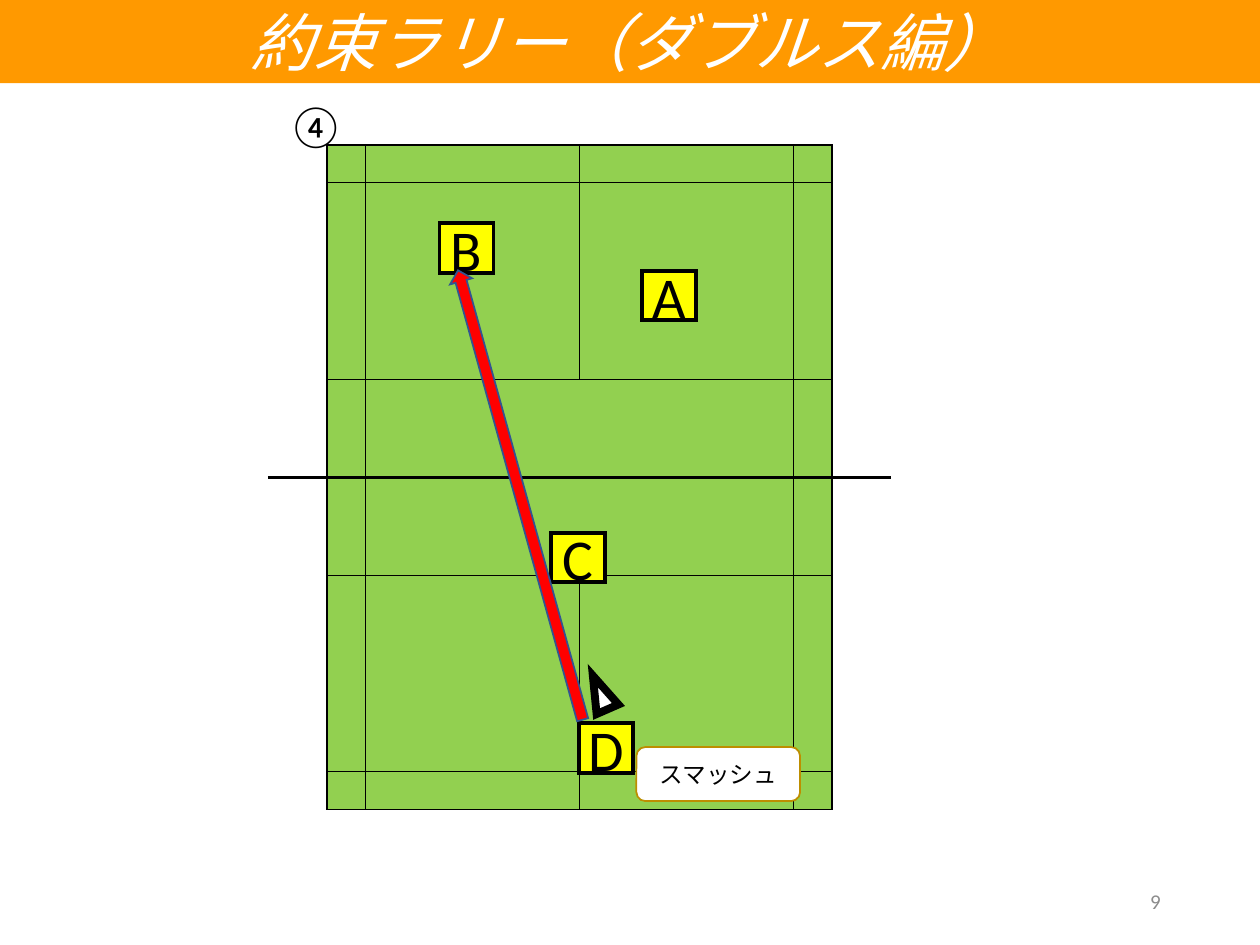
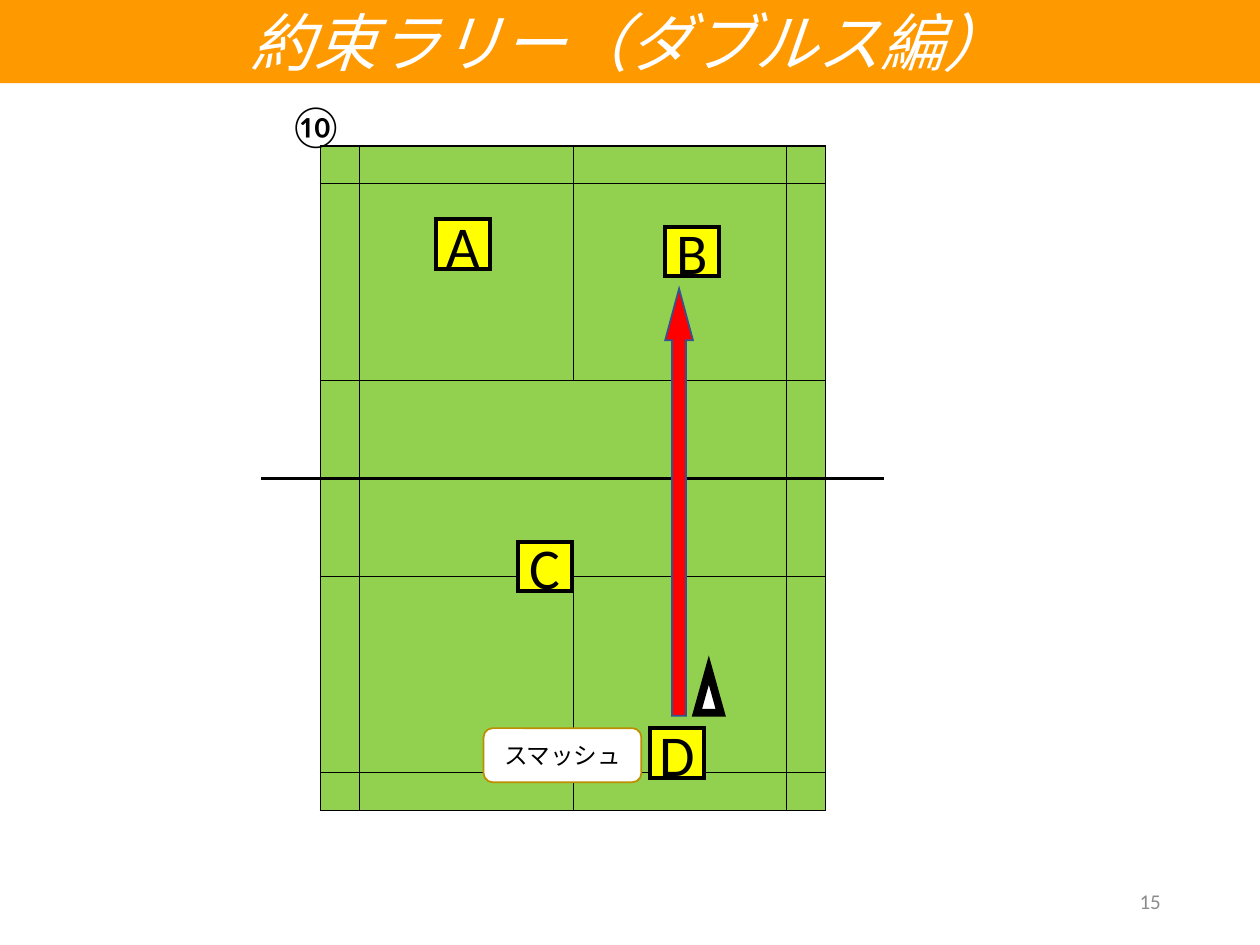
from lxml import etree
from pptx import Presentation
from pptx import util as u
from pptx.dml.color import RGBColor
from pptx.enum import shapes, text
from pptx.oxml.ns import qn

COLOURS = {
    "band": "FF9900", "court": "92D050", "player": "FFFF00", "shot": "FF0000",
    "shot_edge": "325491", "call_edge": "BD8E00", "ink": "000000",
    "paper": "FFFFFF", "number": "8C8C8C",
}
LATIN, JAPANESE = "Calibri", "Noto Sans CJK JP"
COLUMNS = (1.19, 0.78, 4.31, 4.31, 0.78, 1.19)
ROWS = (0.76, 3.97, 1.97, 1.97, 3.97, 0.76)
NO_STYLE = "{2D5ABB26-0587-4C30-8999-92F81FD0307C}"

RALLIES = [
    dict(mark="④", number="9", court=(5.4, 2.92),
         players={"A": (12.95, 5.46), "B": (8.86, 4.5), "D": (11.68, 14.58), "C": (11.1, 10.74)},
         call=(12.83, 15.06, 3.3, 1.09),
         shot=dict(box=(10.26, 5.28, 0.46, 9.4), turn=344.5, head=0.5),
         racket=dict(box=(11.86, 13.59, 0.48, 0.74), turn=336.4)),
    dict(mark="⑩", number="15", court=(5.27, 2.94),
         players={"A": (8.79, 4.42), "B": (13.41, 4.57), "D": (13.11, 14.68), "C": (10.44, 10.92)},
         call=(9.75, 14.68, 3.18, 1.09),
         shot=dict(box=(13.41, 5.82, 0.56, 8.61), turn=0, head=1.857),
         racket=dict(box=(14.05, 13.51, 0.48, 0.86), turn=0)),
]


def colour(name):
    return RGBColor.from_string(COLOURS[name])


def write(frame, words, size, ink="ink", font=LATIN, italic=None,
          align=text.PP_ALIGN.CENTER, anchor=text.MSO_ANCHOR.MIDDLE, insets=None, wrap=True):
    frame.word_wrap = wrap
    frame.vertical_anchor = anchor
    if insets:
        across, down = map(u.Cm, insets)
        frame.margin_left = frame.margin_right = across
        frame.margin_top = frame.margin_bottom = down
    line = frame.paragraphs[0]
    line.alignment = align
    run = line.add_run()
    run.text = words
    run.font.size, run.font.name, run.font.italic = u.Pt(size), font, italic
    run.font.color.rgb = colour(ink)
    etree.SubElement(run.font._element, qn("a:ea"), typeface=JAPANESE)


def rule(properties, side, width):
    edge = etree.SubElement(properties, qn(f"a:{side}"), w=str(u.Pt(width)))
    if width:
        paint = etree.SubElement(edge, qn("a:solidFill"))
        etree.SubElement(paint, qn("a:srgbClr"), val=COLOURS["ink"])
    else:
        etree.SubElement(edge, qn("a:noFill"))


def upright(index):
    return {0: 0, 1: 1, 5: 1, 6: 0}.get(index, 0.5)


def level(index, outside):
    if outside:
        return 2 if index == 3 else 0
    return {0: 1, 3: 2, 6: 1}.get(index, 0.5)


class RallySlide:
    """Holds the shared style and draws each part of a rally on its slide."""

    def __init__(self, deck):
        self.slide = deck.slides.add_slide(deck.slide_layouts[6])

    def shape(self, kind, box, fill, edge=None, width=1, turn=0):
        part = self.slide.shapes.add_shape(kind, *map(u.Cm, box))
        part.shadow.inherit = False
        part.fill.solid()
        part.fill.fore_color.rgb = colour(fill)
        if edge:
            part.line.color.rgb = colour(edge)
            part.line.width = u.Pt(width)
            etree.SubElement(part.line._get_or_add_ln(), qn("a:miter"), lim="800000")
        else:
            part.line.fill.background()
        part.rotation = turn
        return part

    def label(self, box, words, size, **style):
        frame = self.slide.shapes.add_textbox(*map(u.Cm, box)).text_frame
        write(frame, words, size, **style)

    def court(self, corner):
        extent = sum(COLUMNS), sum(ROWS)
        court = self.slide.shapes.add_table(
            len(ROWS), len(COLUMNS), *map(u.Cm, corner + extent)).table
        court.first_row = court.horz_banding = False
        court._tbl.tblPr.find(qn("a:tableStyleId")).text = NO_STYLE
        for column, width in zip(court.columns, COLUMNS):
            column.width = u.Cm(width)
        for row, height in zip(court.rows, ROWS):
            row.height = u.Cm(height)
        for r in (2, 3):
            court.cell(r, 2).merge(court.cell(r, 3))
        for r in range(len(ROWS)):
            for c in range(len(COLUMNS)):
                self.zone(court.cell(r, c), r, c)

    def zone(self, cell, r, c):
        cell.margin_left = cell.margin_right = cell.margin_top = cell.margin_bottom = 0
        etree.SubElement(cell.text_frame.paragraphs[0]._p, qn("a:endParaRPr"), sz="800")
        if cell.is_spanned:
            return
        outside = c in (0, len(COLUMNS) - 1)
        properties = cell._tc.get_or_add_tcPr()
        rule(properties, "lnL", upright(c))
        rule(properties, "lnR", upright(c + 1))
        rule(properties, "lnT", level(r, outside))
        rule(properties, "lnB", level(r + 1, outside))
        if outside:
            cell.fill.background()
        else:
            cell.fill.solid()
            cell.fill.fore_color.rgb = colour("court")

    def player(self, letter, corner):
        player = self.shape(shapes.MSO_SHAPE.RECTANGLE, corner + (1.09, 1), "player", "ink", 2.25)
        write(player.text_frame, letter, 33, insets=(0, 0))

    def call(self, box, words):
        call = self.shape(shapes.MSO_SHAPE.ROUNDED_RECTANGLE, box, "paper", "call_edge")
        write(call.text_frame, words, 13.5)

    def shot(self, box, turn, head):
        shot = self.shape(shapes.MSO_SHAPE.UP_ARROW, box, "shot", "shot_edge", turn=turn)
        shot.adjustments[1] = head

    def racket(self, box, turn):
        self.shape(shapes.MSO_SHAPE.ISOSCELES_TRIANGLE, box, "paper", "ink", 4.5, turn)

    def title(self, words):
        band = self.shape(shapes.MSO_SHAPE.RECTANGLE, (-0.05, 0, 25.45, 1.68), "band")
        write(band.text_frame, words, 36, ink="paper", font=JAPANESE, italic=True,
              insets=(0.18, 0.1), wrap=False)

    def number(self, words):
        self.label((17.93, 17.65, 5.72, 1.02), words, 12, ink="number",
                   align=text.PP_ALIGN.RIGHT)

    def mark(self, words):
        self.label((5.56, 1.88, 1.4, 1.27), words, 24, align=text.PP_ALIGN.LEFT,
                   anchor=text.MSO_ANCHOR.TOP)


def main():
    deck = Presentation()
    deck.slide_width, deck.slide_height = u.Cm(25.4), u.Cm(19.05)
    for rally in RALLIES:
        page = RallySlide(deck)
        page.court(rally["court"])
        for letter, corner in rally["players"].items():
            page.player(letter, corner)
        page.call(rally["call"], "スマッシュ")
        page.shot(**rally["shot"])
        page.title("約束ラリー（ダブルス編）")
        page.number(rally["number"])
        page.racket(**rally["racket"])
        page.mark(rally["mark"])
    deck.save("out.pptx")


if __name__ == "__main__":
    main()
